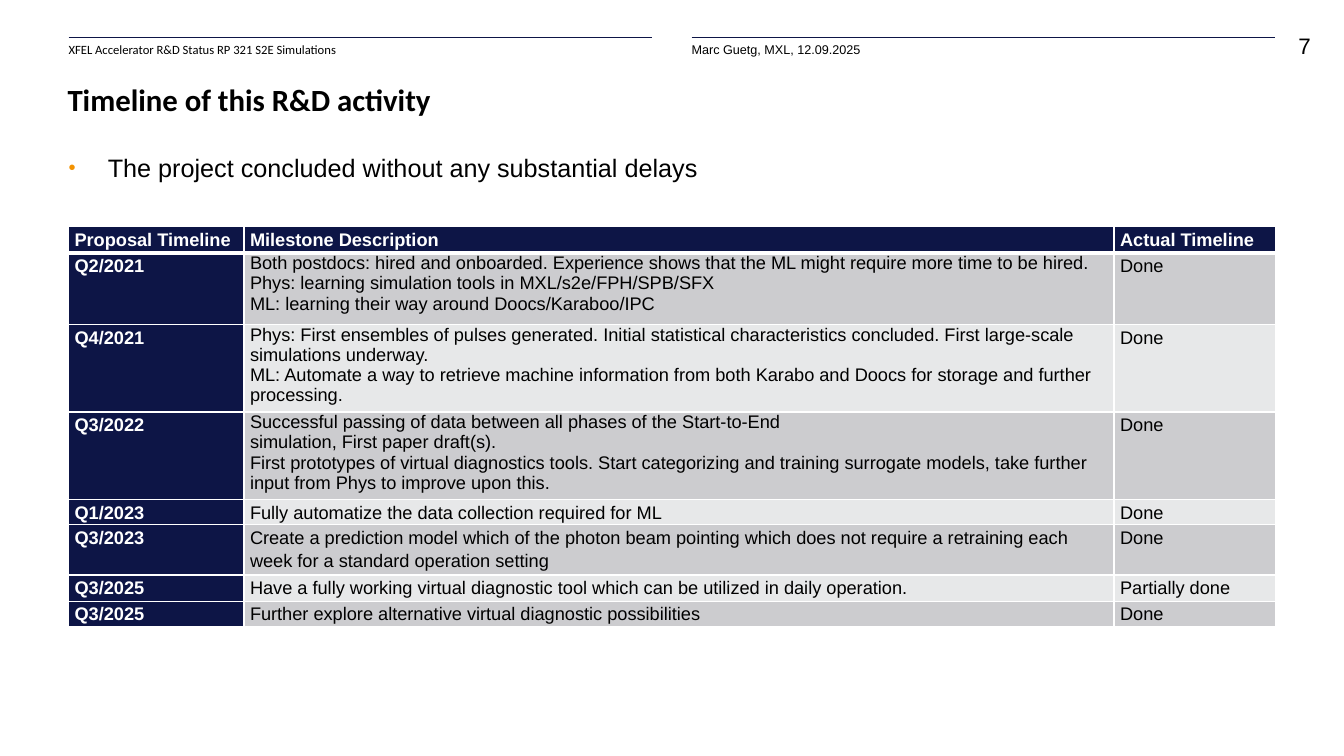
from dataclasses import dataclass

from lxml.etree import SubElement
from pptx import Presentation
from pptx.dml.color import RGBColor
from pptx.enum.shapes import MSO_CONNECTOR
from pptx.enum.text import MSO_ANCHOR, PP_ALIGN
from pptx.oxml.ns import qn
from pptx.util import Inches, Pt


@dataclass(frozen=True)
class Theme:
    navy: str = "0D1546"
    white: str = "FFFFFF"
    black: str = "000000"
    orange: str = "F39200"
    bands: tuple = ("CCCCCF", "E7E8E9")
    sans: str = "Arial"
    heading: str = "Calibri"
    header_size: int = 9
    table_size: int = 13
    page_size: int = 16
    body_size: int = 18
    title_size: int = 22


THEME = Theme()

COLUMN_WIDTHS = (1.74, 8.63, 1.6)
ROW_HEIGHTS = (0.26, 0.71, 0.81, 0.84, 0.24, 0.46, 0.26, 0.24)
HEADINGS = ("Proposal Timeline", "Milestone Description", "Actual Timeline")
MILESTONES = (
    ("Q2/2021", (
        "Both postdocs: hired and onboarded. Experience shows that the ML might require more time to be hired.",
        "Phys: learning simulation tools in MXL/s2e/FPH/SPB/SFX",
        "ML: learning their way around Doocs/Karaboo/IPC"), "Done"),
    ("Q4/2021", (
        "Phys: First ensembles of pulses generated. Initial statistical characteristics concluded. "
        "First large-scale simulations underway.",
        "ML: Automate a way to retrieve machine information from both Karabo and Doocs "
        "for storage and further processing."), "Done"),
    ("Q3/2022", (
        "Successful passing of data between all phases of the Start-to-End",
        "simulation, First paper draft(s).",
        "First prototypes of virtual diagnostics tools. Start categorizing and training surrogate models, "
        "take further input from Phys to improve upon this."), "Done"),
    ("Q1/2023", ("Fully automatize the data collection required for ML",), "Done"),
    ("Q3/2023", (
        "Create a prediction model which of the photon beam pointing which does not require "
        "a retraining each week for a standard operation setting",), "Done"),
    ("Q3/2025", (
        "Have a fully working virtual diagnostic tool which can be utilized in daily operation.",),
     "Partially done"),
    ("Q3/2025", ("Further explore alternative virtual diagnostic possibilities",), "Done"),
)


def write(paragraph, text, size, font=THEME.sans, color=THEME.black, bold=False,
          align=PP_ALIGN.LEFT, line_spacing=None, space_after=None):
    paragraph.alignment = align
    if line_spacing:
        paragraph.line_spacing = line_spacing
    if space_after:
        paragraph.space_after = Pt(space_after)
    run = paragraph.add_run()
    run.text = text
    run.font.name = font
    run.font.size = Pt(size)
    run.font.bold = bold
    run.font.color.rgb = RGBColor.from_string(color)


def add_text_box(slide, left, top, width, height, wrap=True, anchor=MSO_ANCHOR.TOP):
    shape = slide.shapes.add_textbox(Inches(left), Inches(top), Inches(width), Inches(height))
    frame = shape.text_frame
    frame.margin_left = frame.margin_top = frame.margin_right = frame.margin_bottom = 0
    frame.word_wrap = wrap
    frame.vertical_anchor = anchor
    return frame.paragraphs[0]


def add_header_column(slide, left, top, width, text, font):
    rule = slide.shapes.add_connector(
        MSO_CONNECTOR.STRAIGHT, Inches(left), Inches(top), Inches(left + width), Inches(top))
    rule.line.color.rgb = RGBColor.from_string(THEME.navy)
    rule.line.width = Pt(0.5)
    SubElement(rule._element.spPr, qn("a:effectLst"))
    write(add_text_box(slide, left, top + 0.05, width, 0.24), text, THEME.header_size, font)


def add_header(slide, left, top, width, gap):
    column_width = (width - gap) / 2
    add_header_column(slide, left, top, column_width,
                      "XFEL Accelerator R&D Status RP 321 S2E Simulations", THEME.heading)
    add_header_column(slide, left + column_width + gap, top, column_width,
                      "Marc Guetg, MXL, 12.09.2025", THEME.sans)
    page_number = add_text_box(slide, left + width - 0.21, top - 0.05, 0.56, 0.32, wrap=False)
    write(page_number, "7", THEME.page_size, align=PP_ALIGN.RIGHT)


def add_title(slide, left, top, width, height):
    paragraph = add_text_box(slide, left, top, width, height, anchor=MSO_ANCHOR.BOTTOM)
    write(paragraph, "Timeline of this R&D activity", THEME.title_size, THEME.heading, bold=True)


def add_summary(slide, left, top, width, height):
    paragraph = add_text_box(slide, left, top, width, height)
    properties = paragraph._p.get_or_add_pPr()
    indent = Inches(0.39)
    properties.set("marL", str(indent))
    properties.set("indent", str(-indent))
    bullet_color = SubElement(properties, qn("a:buClr"))
    SubElement(bullet_color, qn("a:srgbClr"), val=THEME.orange)
    SubElement(properties, qn("a:buSzPct"), val="80000")
    SubElement(properties, qn("a:buFont"), typeface=THEME.sans)
    SubElement(properties, qn("a:buChar"), char="•")
    write(paragraph, "The project concluded without any substantial delays",
          THEME.body_size, line_spacing=1.14)


def set_borders(cell, **widths):
    properties = cell._tc.get_or_add_tcPr()
    for side in "LRTB":
        border = SubElement(properties, qn(f"a:ln{side}"), w=str(Pt(widths.get(side, 1))))
        fill = SubElement(border, qn("a:solidFill"))
        SubElement(fill, qn("a:srgbClr"), val=THEME.white)


def fill_cell(cell, lines, fill, borders, **text_format):
    cell.margin_left = cell.margin_right = Inches(0.06)
    cell.margin_top = cell.margin_bottom = 0
    set_borders(cell, **borders)
    cell.fill.solid()
    cell.fill.fore_color.rgb = RGBColor.from_string(fill)
    spacing = {"line_spacing": 1.15, "space_after": 10} if len(lines) == 1 else {}
    frame = cell.text_frame
    for index, line in enumerate(lines):
        paragraph = frame.add_paragraph() if index else frame.paragraphs[0]
        write(paragraph, line, THEME.table_size, **spacing, **text_format)


def add_timeline(slide, left, top):
    rows = [[(heading,) for heading in HEADINGS]]
    rows += [[(quarter,), lines, (status,)] for quarter, lines, status in MILESTONES]
    table = slide.shapes.add_table(
        len(rows), len(HEADINGS), Inches(left), Inches(top),
        Inches(sum(COLUMN_WIDTHS)), Inches(sum(ROW_HEIGHTS))).table
    for column, width in zip(table.columns, COLUMN_WIDTHS):
        column.width = Inches(width)
    for row, height in zip(table.rows, ROW_HEIGHTS):
        row.height = Inches(height)
    for row_index, row in enumerate(rows):
        borders = {0: {"B": 3}, 1: {"T": 3}}.get(row_index, {})
        for column_index, lines in enumerate(row):
            is_heading = row_index == 0 or column_index == 0
            fill = THEME.navy if is_heading else THEME.bands[(row_index - 1) % 2]
            fill_cell(table.cell(row_index, column_index), lines, fill, borders,
                      color=THEME.white if is_heading else THEME.black, bold=is_heading)


def main():
    presentation = Presentation()
    presentation.slide_width = Inches(13.33)
    presentation.slide_height = Inches(7.5)
    slide = presentation.slides.add_slide(presentation.slide_layouts[6])
    left, width = 0.68, 11.97
    add_header(slide, left, 0.37, width, 0.39)
    add_title(slide, left - 0.01, 0.78, width, 0.39)
    add_summary(slide, left, 1.47, width, 1.81)
    add_timeline(slide, left, 2.25)
    presentation.save("out.pptx")


if __name__ == "__main__":
    main()
